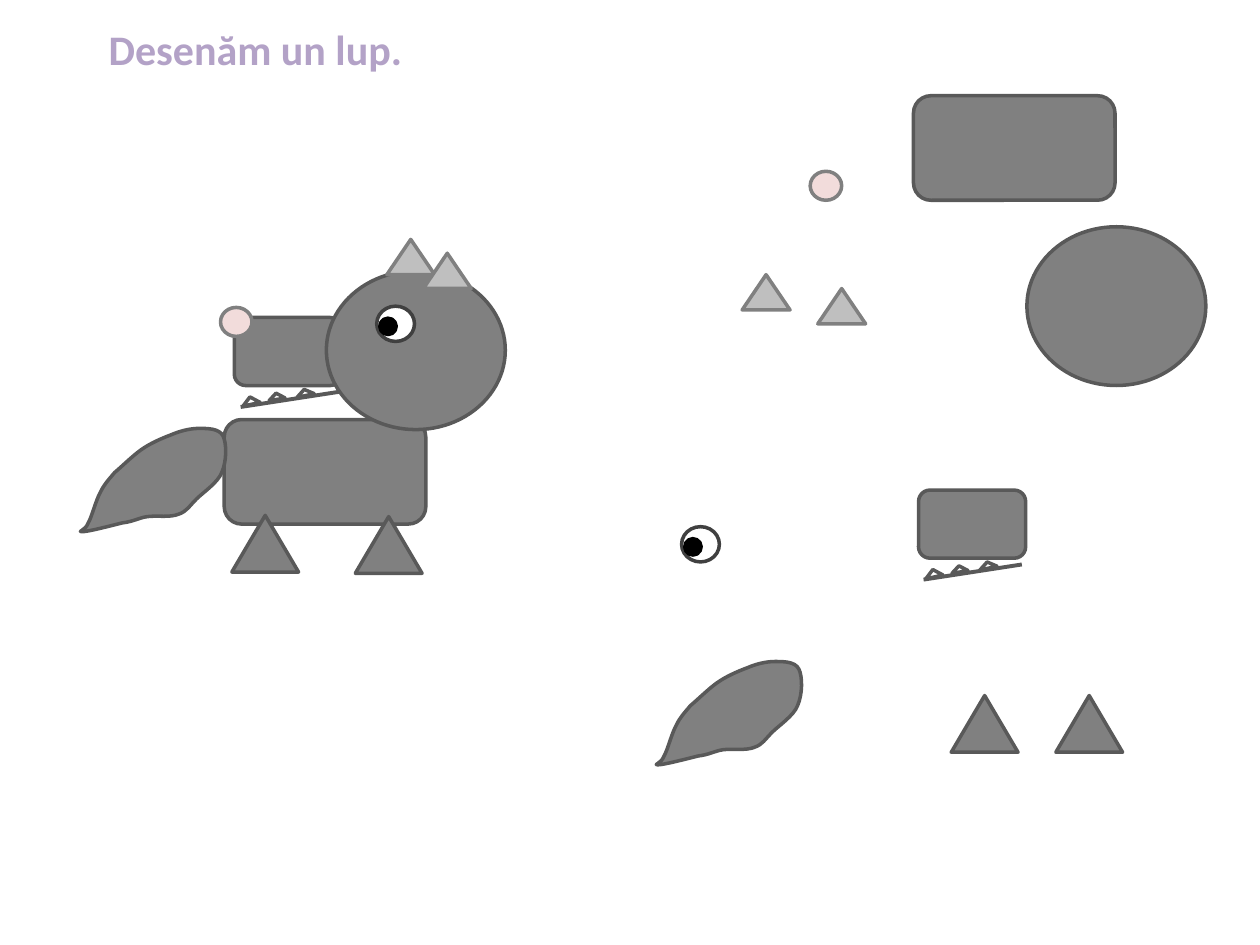
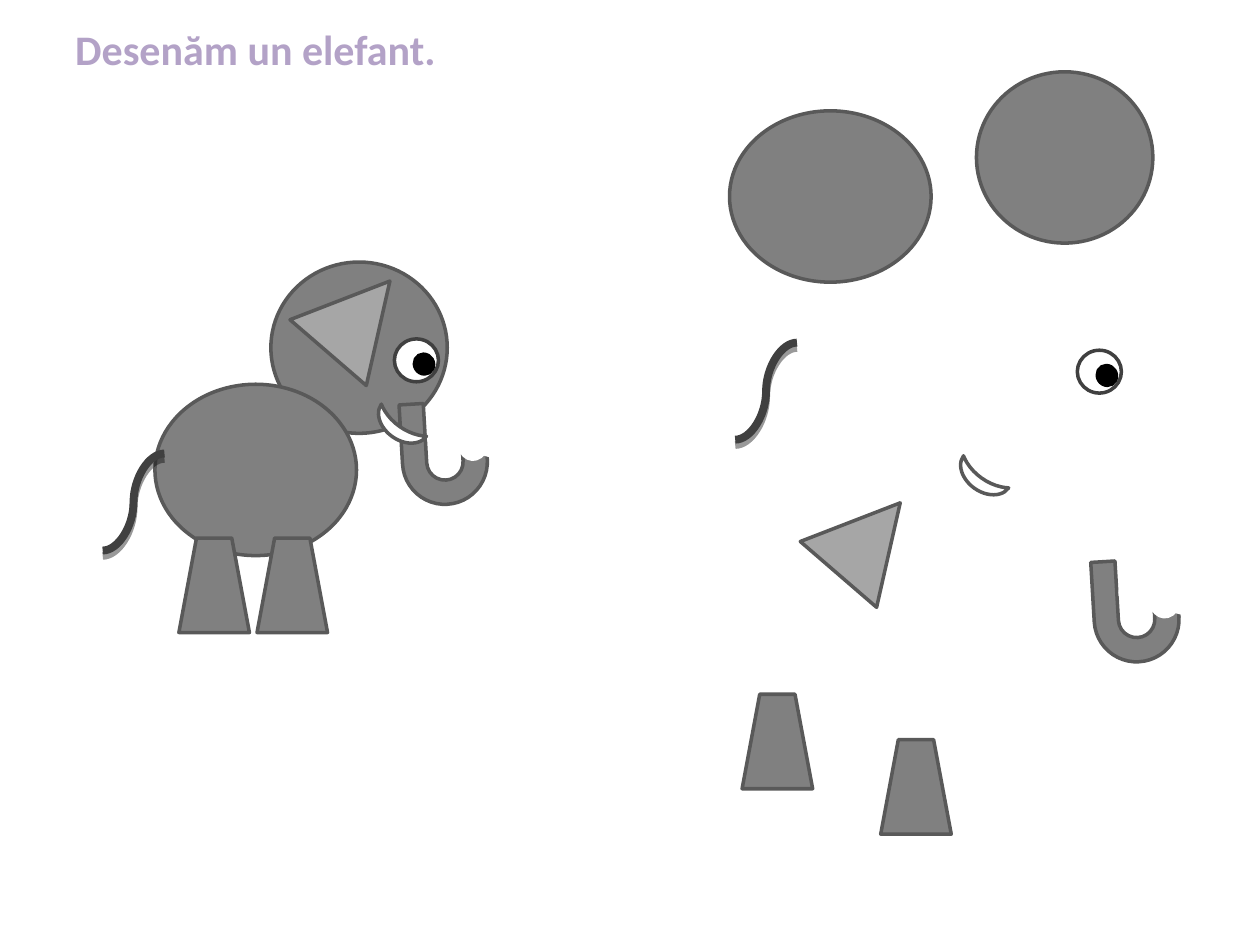
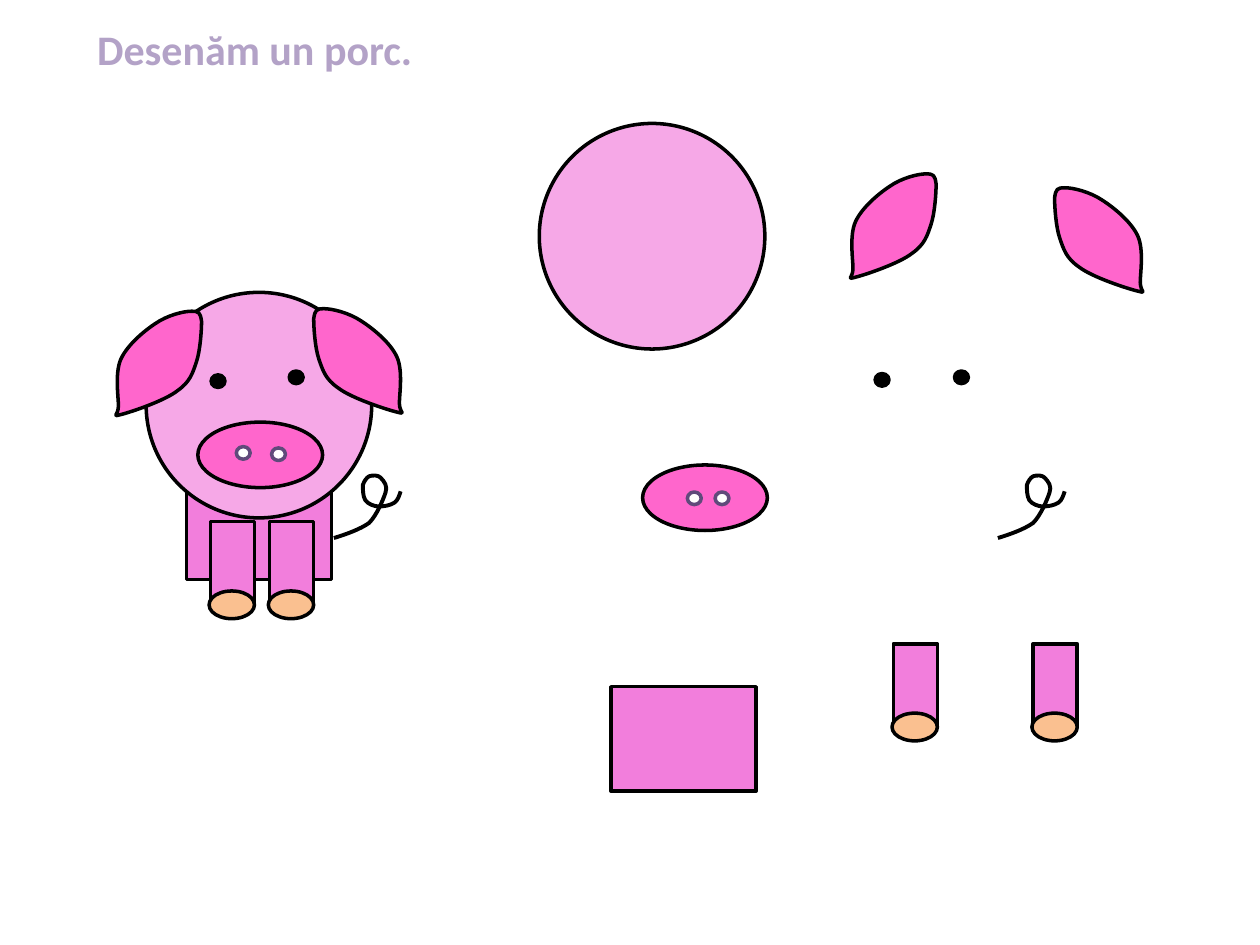
from lxml import etree
from pptx import Presentation
from pptx import util as u
from pptx.dml.color import RGBColor
from pptx.enum import shapes, text
from pptx.oxml.ns import qn

COLORS = {
    "title": "B3A2C7", "gray": "808080", "outline": "595959", "dark": "404040",
    "wolf ear": "BFBFBF", "elephant ear": "A6A6A6", "wolf nose": "F2DCDB",
    "white": "FFFFFF", "black": "000000", "pig body": "F27EDC",
    "pig head": "F6A8E7", "pig pink": "FF66CC", "hoof": "FAC090", "nostril": "604A7B",
}
KIND = shapes.MSO_SHAPE
COLUMNS, ROWS = 100, 75

WOLF_TAIL = [
    (11.3, 0.6), (11, 0), (10.1, 0), (9.4, 0), (8.7, 0), (7.9, 0.2), (7.2, 0.5),
    (6.4, 0.8), (5.5, 1.2), (4.8, 1.7), (4.1, 2.2), (3.3, 3), (2.7, 3.5),
    (2.2, 4.1), (1.9, 4.4), (1.6, 5), (1.2, 5.7), (0.9, 7), (0.6, 7.5),
    (0.4, 8.1), (-0.3, 8.2), (0.1, 8.2), (0.6, 8.2), (2.5, 7.7), (3.3, 7.5),
    (4.2, 7.4), (4.6, 7.1), (5.3, 7), (6.1, 6.9), (7.1, 7.1), (7.8, 6.8),
    (8.4, 6.6), (8.6, 6.2), (9.2, 5.6), (9.7, 5.1), (10.9, 4.3), (11.2, 3.5),
    (11.6, 2.6), (11.6, 1.2), (11.3, 0.6),
]
PIG_EAR = [
    (6, 0), (5.4, 0), (4.1, 0.3), (3.1, 1), (2.2, 1.6), (0.9, 2.7), (0.4, 3.8),
    (-0.1, 4.9), (0.2, 6.8), (0.2, 7.5), (0.2, 8.3), (-0.4, 8.4), (0.4, 8.2),
    (1.2, 8), (3.9, 7.1), (4.9, 6.3), (5.9, 5.6), (6.1, 4.9), (6.4, 4),
    (6.7, 3.1), (6.8, 1.5), (6.8, 0.8), (6.7, 0.1), (6.6, 0), (6, 0),
]
PIG_TAIL = [
    (0, 5), (1, 4.7), (2.1, 4.3), (2.8, 3.8), (3.4, 3.2), (3.9, 2), (4.1, 1.4),
    (4.3, 0.9), (4, 0.5), (3.7, 0.2), (3.5, 0), (3.1, 0), (2.8, 0.1),
    (2.6, 0.2), (2.4, 0.5), (2.3, 0.8), (2.3, 1.1), (2.3, 1.7), (2.5, 2),
    (2.7, 2.3), (3.2, 2.5), (3.6, 2.5), (4, 2.5), (4.5, 2.4), (4.8, 2.2),
    (5.1, 2), (5.2, 1.6), (5.3, 1.3),
]


def color(name):
    return RGBColor.from_string(COLORS[name])


class Sketchbook:
    def __init__(self):
        self.presentation = Presentation()
        self.presentation.slide_width = u.Inches(10)
        self.presentation.slide_height = u.Inches(7.5)
        self.slide = None
        self.canvas = None

    def column(self, value):
        return round(self.presentation.slide_width * value / COLUMNS)

    def row(self, value):
        return round(self.presentation.slide_height * value / ROWS)

    def page(self, title, left, width):
        self.slide = self.presentation.slides.add_slide(self.presentation.slide_layouts[5])
        self.ungroup()
        shape = self.slide.shapes.title
        shape.left, shape.top = self.column(left), self.row(1.4)
        shape.width, shape.height = self.column(width), self.row(5)
        frame = shape.text_frame
        frame.word_wrap = False
        frame.auto_size = text.MSO_AUTO_SIZE.NONE
        frame.vertical_anchor = text.MSO_ANCHOR.TOP
        paragraph = frame.paragraphs[0]
        paragraph.alignment = text.PP_ALIGN.CENTER
        run = paragraph.add_run()
        run.text = title
        run.font.name = "Calibri"
        run.font.size = u.Pt(24)
        run.font.bold = True
        run.font.color.rgb = color("title")

    def group(self):
        self.canvas = self.slide.shapes.add_group_shape().shapes

    def ungroup(self):
        self.canvas = self.slide.shapes

    def paint(self, shape, fill, line, weight=2):
        shape.shadow.inherit = False
        if fill:
            shape.fill.solid()
            shape.fill.fore_color.rgb = color(fill)
        else:
            shape.fill.background()
        shape.line.color.rgb = color(line)
        shape.line.width = u.Pt(weight)

    def shape(self, kind, x, y, width, height, fill="gray", line="outline", turn=0):
        shape = self.canvas.add_shape(
            kind, self.column(x), self.row(y), self.column(width), self.row(height))
        shape.rotation = turn
        self.paint(shape, fill, line)
        return shape

    def curve(self, points, x, y, fill, line, weight=2, stretch=1):
        placed = [(self.column(x + stretch * px), self.row(y + py)) for px, py in points]
        builder = self.canvas.build_freeform(*placed[0])
        builder.add_line_segments(placed[3::3], close=bool(fill))
        shape = builder.convert_to_shape()
        segments = list(shape.element.iter(qn("a:lnTo")))
        for index, segment in enumerate(segments):
            bend = etree.Element(qn("a:cubicBezTo"))
            for px, py in placed[3 * index + 1:3 * index + 4]:
                etree.SubElement(bend, qn("a:pt"),
                                 x=str(px - shape.left), y=str(py - shape.top))
            segment.getparent().replace(segment, bend)
        self.paint(shape, fill, line, weight)

    def connector(self, kind, start, end, line, weight, shadow=False):
        connector = self.canvas.add_connector(
            kind, self.column(start[0]), self.row(start[1]),
            self.column(end[0]), self.row(end[1]))
        connector.line.color.rgb = color(line)
        connector.line.width = u.Pt(weight)
        effects = etree.SubElement(connector.element.spPr, qn("a:effectLst"))
        if shadow:
            outer = etree.SubElement(
                effects, qn("a:outerShdw"), blurRad="0", dist=str(u.Pt(3)),
                dir="5400000", rotWithShape="0")
            tint = etree.SubElement(outer, qn("a:srgbClr"), val=COLORS["black"])
            etree.SubElement(tint, qn("a:alpha"), val="40000")

    def eye(self, x, y, size, pupil_offset, pupil_size):
        self.shape(KIND.OVAL, x, y, *size, "white", "dark")
        self.shape(KIND.OVAL, x + pupil_offset[0], y + pupil_offset[1],
                   *pupil_size, "black", "black", 328.6)


def wolf_body(book, x, y):
    book.shape(KIND.ROUNDED_RECTANGLE, x, y, 16, 8.3)


def wolf_head(book, x, y):
    book.shape(KIND.OVAL, x, y, 14.2, 12.6)


def wolf_snout(book, x, y):
    book.shape(KIND.ROUNDED_RECTANGLE, x, y, 8.5, 5.4)


def wolf_jaw(book, x, y):
    book.connector(shapes.MSO_CONNECTOR.STRAIGHT, (x, y + 1.2), (x + 7.8, y), "outline", 2.25)
    for dx, dy, width, height, turn in (
            (0.1, 0.4, 1.4, 0.6, 347.5), (2.2, 0.1, 1.3, 0.5, 350.2),
            (4.4, -0.2, 1.4, 0.5, 347.5)):
        book.shape(KIND.ISOSCELES_TRIANGLE, x + dx, y + dy, width, height, "white", turn=turn)


def wolf_ears(book, *places):
    for x, y in places:
        book.shape(KIND.ISOSCELES_TRIANGLE, x, y, 3.8, 2.8, "wolf ear", "gray")


def wolf_eye(book, x, y):
    book.eye(x, y, (3, 2.8), (0.25, 0.95), (1.3, 1.3))


def wolf_nose(book, x, y):
    book.shape(KIND.OVAL, x, y, 2.5, 2.3, "wolf nose", "gray")


def wolf_legs(book, *places):
    for x, y in places:
        book.shape(KIND.ISOSCELES_TRIANGLE, x, y, 5.3, 4.5)


def wolf_tail(book, x, y):
    book.curve(WOLF_TAIL, x, y, "gray", "outline")


def draw_wolf(book):
    book.page("Desenăm un lup. ", 7.5, 26.3)
    wolf_body(book, 72.5, 7.6)
    wolf_head(book, 81.5, 18)
    book.group()
    wolf_ears(book, (58.9, 21.8), (64.9, 22.9))
    book.group()
    wolf_eye(book, 54.1, 41.8)
    book.ungroup()
    wolf_nose(book, 64.3, 13.6)
    book.group()
    wolf_legs(book, (75.5, 55.2), (83.8, 55.2))
    book.group()
    wolf_snout(book, 72.9, 38.9)
    wolf_jaw(book, 73.3, 44.8)
    book.group()
    wolf_body(book, 17.8, 33.3)
    wolf_snout(book, 18.6, 25.2)
    wolf_head(book, 25.9, 21.5)
    wolf_ears(book, (30.7, 19), (33.6, 20.1))
    wolf_eye(book, 29.9, 24.3)
    wolf_nose(book, 17.5, 24.4)
    wolf_legs(book, (18.4, 40.9), (28.2, 41))
    wolf_jaw(book, 19.1, 31.1)
    wolf_tail(book, 6.4, 34)
    book.ungroup()
    wolf_tail(book, 52.1, 52.5)


def elephant_head(book, x, y):
    book.shape(KIND.OVAL, x, y, 14, 13.6)


def elephant_body(book, x, y):
    book.shape(KIND.OVAL, x, y, 16, 13.6)


def elephant_legs(book, *places):
    for x, y in places:
        book.shape(KIND.TRAPEZOID, x, y, 5.6, 7.5)


def elephant_ear(book, x, y):
    book.shape(KIND.ISOSCELES_TRIANGLE, x, y, 8, 7.5, "elephant ear", turn=40.8)


def elephant_eye(book, x, y):
    book.eye(x, y, (3.5, 3.4), (1.6, 1.2), (1.5, 1.6))


def elephant_tail(book, x, y):
    book.connector(shapes.MSO_CONNECTOR.CURVE, (x, y + 7.7), (x + 4.9, y), "dark", 4.5, True)


def elephant_trunk(book, x, y):
    trunk = book.shape(KIND.U_TURN_ARROW, x, y, 7.7, 8.1, turn=176.6)
    trunk.element.spPr.find(qn("a:xfrm")).set("flipH", "1")
    for dx, dy, width, height in (
            (2.1, 1.4, 3.6, 2.7), (5.8, 0.55, 2.6, 3.7), (4.4, 0.85, 2.6, 3.7)):
        book.shape(KIND.OVAL, x + dx, y + dy, width, height, "white", "white", 4.1)


def elephant_tusk(book, x, y):
    tusk = book.shape(KIND.MOON, x, y, 1.6, 4.4, "white", turn=305.4)
    tusk.adjustments[0] = 0.62


def draw_elephant(book):
    book.page("Desenăm un elefant. ", 4.8, 31.7)
    book.group()
    elephant_head(book, 21.5, 20.8)
    elephant_body(book, 12.3, 30.5)
    elephant_legs(book, (14.2, 42.7), (20.4, 42.7))
    elephant_ear(book, 24.5, 21.4)
    elephant_eye(book, 31.3, 26.9)
    elephant_tail(book, 8.15, 36)
    elephant_trunk(book, 31.9, 31.9)
    elephant_tusk(book, 30.8, 31.8)
    book.ungroup()
    elephant_head(book, 77.5, 5.7)
    elephant_body(book, 57.9, 8.8)
    elephant_legs(book, (58.9, 55.1), (69.9, 58.7))
    elephant_ear(book, 65, 39)
    book.group()
    elephant_eye(book, 85.5, 27.8)
    book.ungroup()
    elephant_tail(book, 58.35, 27.2)
    book.group()
    elephant_trunk(book, 86.8, 44.4)
    book.ungroup()
    elephant_tusk(book, 77, 35.9)


def pig_body(book, x, y):
    book.shape(KIND.RECTANGLE, x, y, 11.5, 8.3, "pig body", "black")


def pig_leg(book, x, y):
    book.shape(KIND.RECTANGLE, x, y, 3.5, 6.6, "pig body", "black")
    book.shape(KIND.OVAL, x - 0.1, y + 5.5, 3.6, 2.2, "hoof", "black")


def pig_head(book, x, y):
    book.shape(KIND.OVAL, x, y, 17.9, 17.9, "pig head", "black")


def pig_ears(book, left, right):
    book.curve(PIG_EAR, *left, "pig pink", "black")
    book.curve(PIG_EAR, *right, "pig pink", "black", stretch=-1.03)


def pig_dots(book, fill, line, *places):
    for x, y in places:
        book.shape(KIND.OVAL, x, y, 1, 1.1, fill, line, 90)


def pig_snout(book, x, y):
    book.shape(KIND.OVAL, x, y, 9.9, 5.2, "pig pink", "black")


def pig_tail(book, x, y):
    book.curve(PIG_TAIL, x, y, None, "black", 2.25)


def draw_pig(book):
    book.page("Desenăm un porc. ", 6.6, 28)
    book.group()
    pig_body(book, 14.8, 37.7)
    pig_leg(book, 16.7, 41.4)
    pig_head(book, 11.6, 23.2)
    pig_ears(book, (9.2, 24.7), (31.9, 24.5))
    pig_snout(book, 15.7, 33.5)
    pig_dots(book, "black", "black", (16.8, 29.7), (23, 29.4))
    pig_dots(book, "white", "nostril", (21.6, 35.5), (18.8, 35.4))
    pig_leg(book, 21.4, 41.4)
    pig_tail(book, 26.5, 37.7)
    book.ungroup()
    pig_body(book, 48.5, 54.5)
    book.group()
    pig_leg(book, 70.9, 51.1)
    book.ungroup()
    pig_head(book, 42.8, 9.8)
    pig_ears(book, (67.5, 13.8), (90.7, 14.9))
    book.group()
    pig_dots(book, "black", "black", (69.5, 29.6), (75.8, 29.4))
    book.group()
    pig_snout(book, 51, 36.9)
    pig_dots(book, "white", "nostril", (56.8, 39), (54.6, 39))
    book.group()
    pig_leg(book, 82, 51.1)
    book.ungroup()
    pig_tail(book, 79.2, 37.7)


def main():
    book = Sketchbook()
    for draw in (draw_wolf, draw_elephant, draw_pig):
        draw(book)
    book.presentation.save("out.pptx")


if __name__ == "__main__":
    main()
